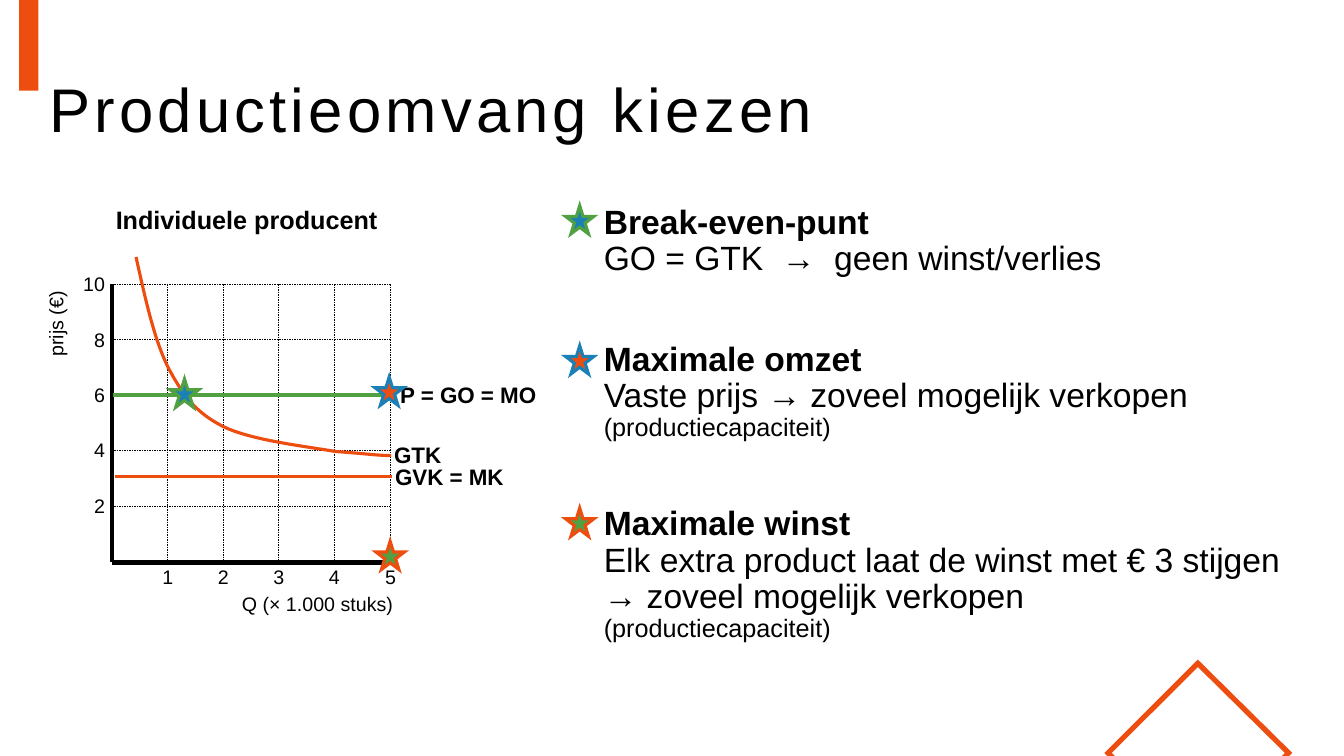
from lxml import etree
from pptx import Presentation
from pptx import util as u
from pptx.dml.color import RGBColor
from pptx.enum import dml, shapes, text
from pptx.oxml.ns import qn

PX = 9144
COLORS = {"black": "000000", "orange": "ED4D0F", "green": "51A041", "blue": "1A80B6"}


def rgb(name):
    """Return the named colour."""
    return RGBColor.from_string(COLORS[name])


def apply(target, values):
    """Set each attribute of target from a dict of format values."""
    for name, value in values.items():
        setattr(target, name, value)


def bezier(start, control1, control2, end, steps=16):
    """Return points along a cubic curve, without its start."""
    points = []
    for step in range(1, steps + 1):
        t = step / steps
        weights = ((1 - t) ** 3, 3 * t * (1 - t) ** 2, 3 * t * t * (1 - t), t ** 3)
        corners = (start, control1, control2, end)
        points.append(tuple(sum(w * c[axis] for w, c in zip(weights, corners)) for axis in (0, 1)))
    return points


class SlideBuilder:
    """Hold the text style and the current slide, and draw elements on it."""

    def __init__(self, slide, font="Arial"):
        """Keep the slide and its font."""
        self.slide = slide
        self.font = font

    def outline(self, shape, color, width):
        """Give a shape a sharp-cornered line."""
        shape.line.color.rgb = rgb(color)
        shape.line.width = u.Pt(width)
        miter = etree.SubElement(shape._element.spPr.find(qn("a:ln")), qn("a:miter"))
        miter.set("lim", "800000")

    def preset(self, kind, box, fill, line=None, width=2.25):
        """Draw a filled preset shape."""
        shape = self.slide.shapes.add_shape(kind, *(n * PX for n in box))
        shape.shadow.inherit = False
        shape.fill.solid()
        shape.fill.fore_color.rgb = rgb(fill)
        if line:
            self.outline(shape, line, width)
        else:
            shape.line.fill.background()

    def freeform(self, points, color, width, close=False):
        """Draw an unfilled outline through points."""
        scaled = [(round(x * PX), round(y * PX)) for x, y in points]
        builder = self.slide.shapes.build_freeform(*scaled[0], scale=1.0)
        builder.add_line_segments(scaled[1:], close=close)
        shape = builder.convert_to_shape()
        shape.shadow.inherit = False
        shape.fill.background()
        self.outline(shape, color, width)

    def line(self, start, end, color="black", width=3, dash=None):
        """Draw a straight line."""
        connector = self.slide.shapes.add_connector(
            shapes.MSO_CONNECTOR.STRAIGHT, *(n * PX for n in start + end))
        connector.line.color.rgb = rgb(color)
        apply(connector.line, {"width": u.Pt(width), "dash_style": dash})
        etree.SubElement(connector._element.spPr, qn("a:effectLst"))

    def add_text(self, paragraph, content, size, bold=False, spacing=0):
        """Add a run to a paragraph."""
        run = paragraph.add_run()
        run.text = content
        apply(run.font, {"name": self.font, "size": u.Pt(size), "bold": bold})
        run.font.color.rgb = rgb("black")
        if spacing:
            run._r.get_or_add_rPr().set("spc", str(spacing * 100))

    def frame(self, box, wrap=True, anchor=text.MSO_ANCHOR.TOP, rotation=0):
        """Add a text box and return its text frame."""
        shape = self.slide.shapes.add_textbox(*(n * PX for n in box))
        shape.rotation = rotation
        apply(shape.text_frame, {"word_wrap": wrap, "vertical_anchor": anchor})
        return shape.text_frame

    def label(self, content, box, size=14, bold=False, align=text.PP_ALIGN.LEFT,
              wrap=False, rotation=0):
        """Add a one-line label."""
        paragraph = self.frame(box, wrap, rotation=rotation).paragraphs[0]
        paragraph.alignment = align
        self.add_text(paragraph, content, size, bold)

    def title(self, content, box):
        """Add the slide title."""
        paragraph = self.frame(box, anchor=text.MSO_ANCHOR.MIDDLE).paragraphs[0]
        paragraph.line_spacing = 0.9
        self.add_text(paragraph, content, 44, spacing=3)

    def body(self, blocks, box, gap=46):
        """Add paragraphs made of a bold heading and further lines."""
        frame = self.frame(box)
        for index, lines in enumerate(blocks):
            paragraph = frame.add_paragraph() if index else frame.paragraphs[0]
            apply(paragraph, {"line_spacing": 0.9, "space_before": u.Pt(gap if index else 10)})
            for number, content in enumerate(lines):
                if number:
                    paragraph.add_line_break()
                size = 18 if content.startswith("(") else 24
                self.add_text(paragraph, content, size, number == 0)


def draw_chart(builder):
    """Draw the cost and price chart of a single producer."""
    left, top, side, cells = 111, 282, 276, 5
    right, bottom = left + side, top + side
    columns = [left + side * n // cells for n in range(cells + 1)]
    rows = [top + side * n // cells for n in range(cells + 1)]
    grid = {"width": 0.25, "dash": dml.MSO_LINE.DASH}
    for y in rows[:-1]:
        builder.line((left, y), (right, y), **grid)
    for x in columns[1:]:
        builder.line((x, top), (x, bottom), **grid)
    builder.line((left, top), (left, bottom))
    builder.line((right, bottom), (left, bottom))
    for n, y in enumerate(rows[:-1]):
        builder.label(str(10 - 2 * n), (72, y - 17, 42, 34), align=text.PP_ALIGN.RIGHT, wrap=True)
    for n, x in enumerate(columns[1:], 1):
        builder.label(str(n), (x - 15, 556, 31, 34), align=text.PP_ALIGN.CENTER)
    builder.label("Q (× 1.000 stuks)", (230, 582, 171, 34))
    builder.label("prijs (€)", (13, 304, 85, 34), rotation=270)

    builder.line((112, 392), (388, 392), "green", 3)
    builder.line((114, 473), (389, 473), "orange", 2.25)
    for content, box in (("P = GO = MO", (387, 373, 158, 37)),
                         ("GVK = MK", (382, 455, 129, 37)),
                         ("GTK", (381, 433, 68, 37))):
        builder.label(content, box, 16, True)
    curve = [(135, 255)]
    for segment in (((144, 296), (153, 337), (167, 365)),
                    ((182, 393), (194, 409), (221, 423)),
                    ((249, 437), (305, 443), (333, 448)),
                    ((362, 450), (375, 452), (388, 452))):
        curve += bezier(curve[-1], *segment)
    builder.freeform(curve, "orange", 2.25)
    builder.label("Individuele producent", (105, 198, 294, 40), 18, True, wrap=True)


def main():
    """Build and save the slide."""
    presentation = Presentation()
    apply(presentation, {"slide_width": 1333 * PX, "slide_height": 750 * PX})
    builder = SlideBuilder(presentation.slides.add_slide(presentation.slide_layouts[6]))
    builder.preset(shapes.MSO_SHAPE.RECTANGLE, (19, -25, 19, 115), "orange")
    builder.freeform([(1269, 756), (1108, 756), (1099, 747), (1188, 658), (1278, 747)],
                     "orange", 3.75, close=True)
    builder.title("Productieomvang kiezen", (39, 39, 1261, 145))
    builder.body((
        ("Break-even-punt", "GO = GTK  →  geen winst/verlies"),
        ("Maximale omzet", "Vaste prijs → zoveel mogelijk verkopen", "(productiecapaciteit)"),
        ("Maximale winst", "Elk extra product laat de winst met € 3 stijgen",
         "→ zoveel mogelijk verkopen", "(productiecapaciteit)"),
    ), (589, 199, 711, 512))
    draw_chart(builder)
    for fill, line, chart_spot, legend_top in (("blue", "green", (169, 376), 204),
                                               ("orange", "blue", (372, 374), 343),
                                               ("green", "orange", (373, 537), 504)):
        for spot in (chart_spot, (561, legend_top)):
            builder.preset(shapes.MSO_SHAPE.STAR_5_POINT, (*spot, 28, 28), fill, line)
    presentation.save("out.pptx")


if __name__ == "__main__":
    main()
